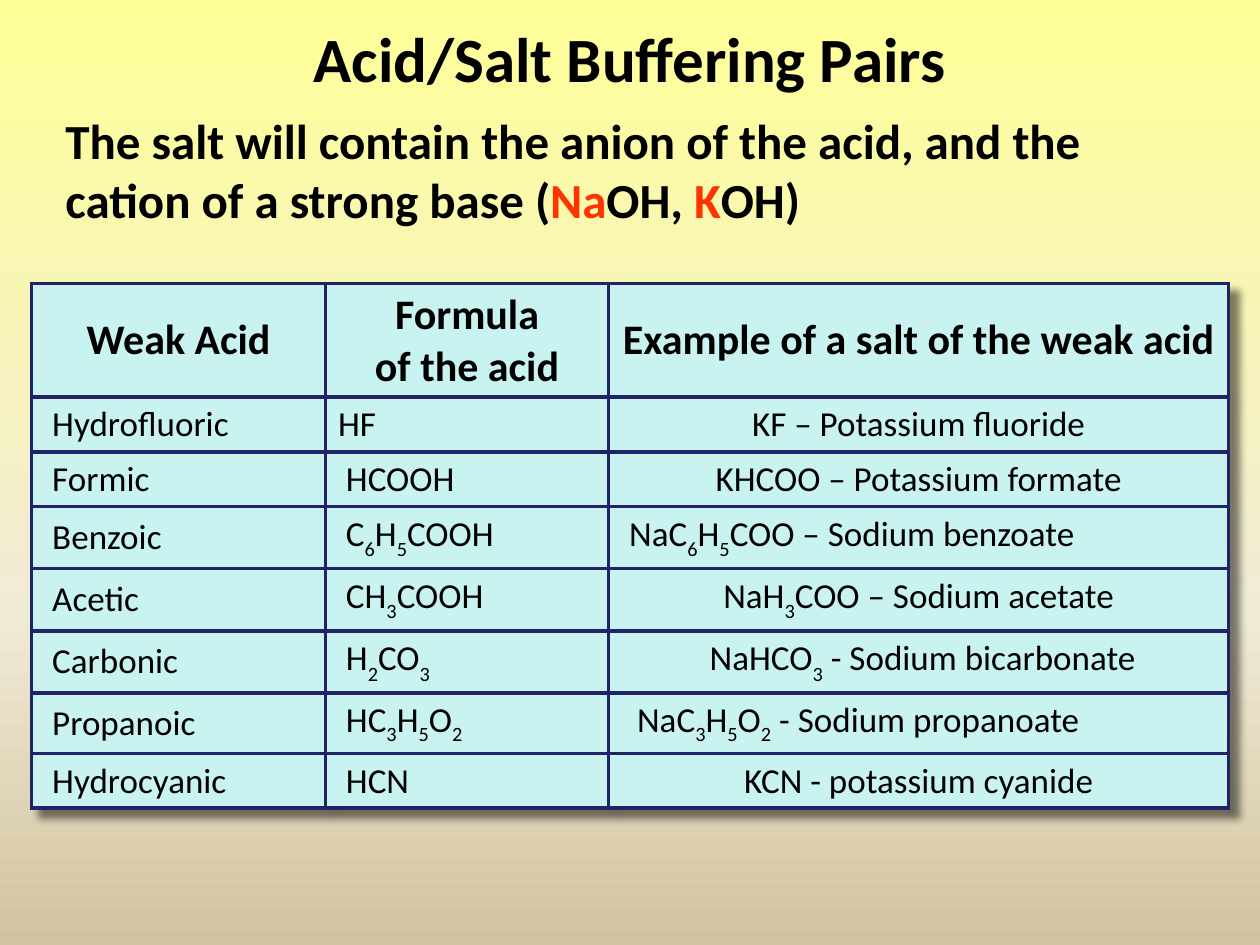
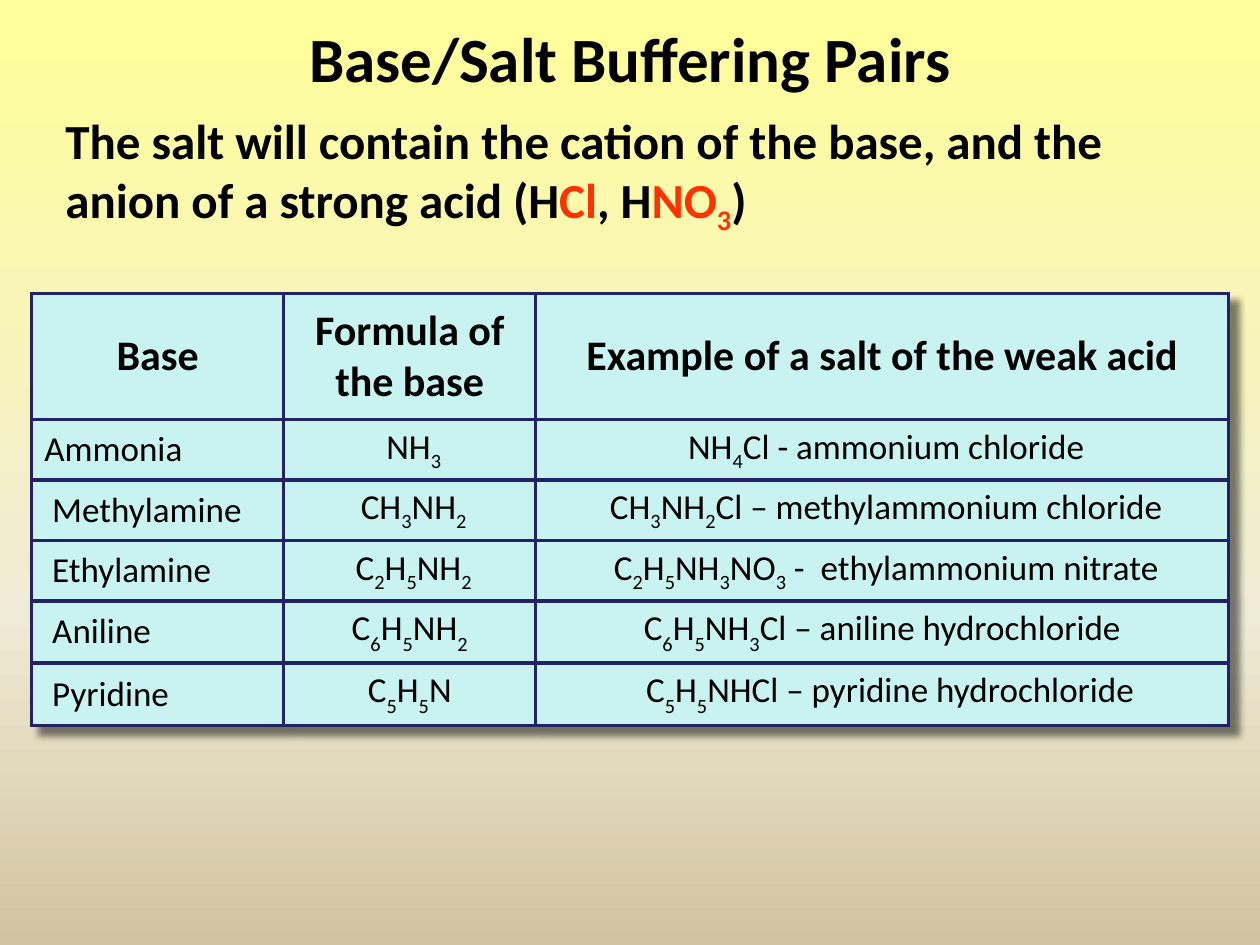
from copy import deepcopy
from itertools import groupby
from typing import NamedTuple

from lxml import etree
from pptx import Presentation
from pptx import util as u
from pptx.dml.color import RGBColor
from pptx.enum import text
from pptx.oxml.ns import qn

COLORS = {
    "text": "000000", "accent": "FF3300", "cell": "C9F3F0", "border": "222267",
    "sky": "FFFF99", "cream": "F0EBD5", "sand": "D1C39F",
}
FONT = "Calibri"
LEFT, CENTER = text.PP_ALIGN.LEFT, text.PP_ALIGN.CENTER
MIDDLE = text.MSO_ANCHOR.MIDDLE
TITLE_BOX = (1.27, 0.43, 22.86, 1.47)
LEAD_BOX = (1.07, 2.11, 23.32, 2.62)
BODY_ROW = 0.69
BORDER_PT = 2.25


class Pair(NamedTuple):
    name: str
    formula: str
    salt: str
    drop: int = -25
    salt_align: text.PP_ALIGN = CENTER


ACIDS = [
    Pair(" Hydrofluoric ", "HF ", " KF – Potassium fluoride "),
    Pair(" Formic ", " HCOOH ", " KHCOO – Potassium formate "),
    Pair(" Benzoic ", " C6H5COOH ", " NaC6H5COO – Sodium benzoate", -30, LEFT),
    Pair(" Acetic ", " CH3COOH ", " NaH3COO – Sodium acetate ", -30),
    Pair(" Carbonic ", " H2CO3 ", " NaHCO3 - Sodium bicarbonate", -30),
    Pair(" Propanoic ", " HC3H5O2 ", "  NaC3H5O2 - Sodium propanoate", -25, LEFT),
    Pair(" Hydrocyanic ", " HCN ", " KCN - potassium cyanide "),
]
BASES = [
    Pair("Ammonia ", " NH3", " NH4Cl - ammonium chloride"),
    Pair(" Methylamine", " CH3NH2", " CH3NH2Cl – methylammonium chloride"),
    Pair(" Ethylamine", " C2H5NH2", " C2H5NH3NO3 -  ethylammonium nitrate"),
    Pair(" Aniline", " C6H5NH2 ", "C6H5NH3Cl – aniline hydrochloride", -30),
    Pair(" Pyridine", " C5H5N ", "  C5H5NHCl – pyridine hydrochloride", -30),
]


def rgb(name):
    return RGBColor.from_string(COLORS[name])


def cm(values):
    return [u.Cm(v) for v in values]


def add_runs(p, content, size, bold=False, color="text", drop=-25):
    """Add content to a paragraph, with every group of digits as a subscript."""
    for is_digit, chars in groupby(content, str.isdigit):
        r = p.add_run()
        r.text = "".join(chars)
        r.font.name, r.font.size, r.font.bold = FONT, u.Pt(size), bold
        r.font.color.rgb = rgb(color)
        if is_digit:
            r.font._element.set("baseline", str(drop * 1000))


def paint_background(master):
    fill = master.background.fill
    fill.gradient()
    fill.gradient_angle = 270
    stops = master.element.find(".//" + qn("a:gsLst"))
    stops.append(deepcopy(stops[-1]))
    gradient = [("sky", 0), ("cream", 0.65), ("sand", 1)]
    for stop, (name, position) in zip(fill.gradient_stops, gradient):
        stop.color.rgb = rgb(name)
        stop.position = position


def add_title(s, content):
    sp = s.shapes.title
    sp.left, sp.top, sp.width, sp.height = cm(TITLE_BOX)
    tf = sp.text_frame
    tf.auto_size = text.MSO_AUTO_SIZE.NONE
    tf.vertical_anchor = MIDDLE
    p = tf.paragraphs[0]
    p.alignment = CENTER
    add_runs(p, content, 36, bold=True)


def add_lead(s, content):
    """Add the opening statement; parts between asterisks take the accent colour."""
    tf = s.shapes.add_textbox(*cm(LEAD_BOX)).text_frame
    tf.word_wrap = True
    tf.auto_size = text.MSO_AUTO_SIZE.SHAPE_TO_FIT_TEXT
    for i, part in enumerate(content.split("*")):
        add_runs(tf.paragraphs[0], part, 28, True, "accent" if i % 2 else "text")


def add_borders(cell):
    tc_pr = cell._tc.get_or_add_tcPr()
    for side in "LRTB":
        ln = etree.SubElement(tc_pr, qn("a:ln" + side), w=str(u.Pt(BORDER_PT)))
        solid = etree.SubElement(ln, qn("a:solidFill"))
        etree.SubElement(solid, qn("a:srgbClr"), val=COLORS["border"])


def add_shadow(table):
    effects = etree.Element(qn("a:effectLst"))
    shadow = etree.SubElement(
        effects, qn("a:outerShdw"), blurRad=str(u.Pt(4)), dist=str(u.Pt(7)),
        dir="2700000", algn="tl", rotWithShape="0")
    color = etree.SubElement(shadow, qn("a:srgbClr"), val=COLORS["text"])
    etree.SubElement(color, qn("a:alpha"), val="50000")
    table._tbl.tblPr.insert(0, effects)


def fill_cell(cell, content, align, size, bold=False, drop=-25):
    add_borders(cell)
    cell.fill.solid()
    cell.fill.fore_color.rgb = rgb("cell")
    cell.vertical_anchor = MIDDLE
    tf = cell.text_frame
    for i, line in enumerate(content.split("\n")):
        p = tf.add_paragraph() if i else tf.paragraphs[0]
        p.alignment = align
        add_runs(p, line, size, bold, drop=drop)


def add_pairs_table(s, box, widths, header_height, headers, pairs, formula_align):
    frame = s.shapes.add_table(len(pairs) + 1, len(headers), *cm(box))
    table = frame.table
    table.first_row = table.horz_banding = False
    add_shadow(table)
    for column, width in zip(table.columns, widths):
        column.width = u.Cm(width)
    for i, row in enumerate(table.rows):
        row.height = u.Cm(BODY_ROW if i else header_height)
    frame.height = u.Cm(box[3])

    for col, header in enumerate(headers):
        fill_cell(table.cell(0, col), header, CENTER, 24, bold=True)
    for row, pair in enumerate(pairs, 1):
        aligns = (LEFT, formula_align, pair.salt_align)
        for col, (content, align) in enumerate(zip(pair[:3], aligns)):
            fill_cell(table.cell(row, col), content, align, 20, drop=pair.drop)


def add_pairs_slide(prs, title, lead, **table):
    s = prs.slides.add_slide(prs.slide_layouts[5])
    add_title(s, title)
    add_lead(s, lead)
    add_pairs_table(s, **table)


def main():
    prs = Presentation()
    prs.slide_width, prs.slide_height = cm((25.4, 19.05))
    paint_background(prs.slide_master)
    salt_header = "Example of a salt of the weak acid"
    add_pairs_slide(
        prs, "Acid/Salt Buffering Pairs",
        "The salt will contain the anion of the acid, and the cation of a "
        "strong base (*Na*OH, *K*OH)",
        box=(0.64, 5.72, 24.13, 9.98), widths=(5.92, 5.71, 12.5),
        header_height=1.9,
        headers=("Weak Acid", "Formula\nof the acid", salt_header),
        pairs=ACIDS, formula_align=LEFT)
    add_pairs_slide(
        prs, "Base/Salt Buffering Pairs",
        "The salt will contain the cation of the base, and the anion of a "
        "strong acid (H*Cl*, H*NO3*)",
        box=(0.64, 5.92, 24.13, 8.05), widths=(5.08, 5.08, 13.97),
        header_height=2.54,
        headers=("Base", "Formula of the base", salt_header),
        pairs=BASES, formula_align=CENTER)
    prs.save("out.pptx")


if __name__ == "__main__":
    main()
